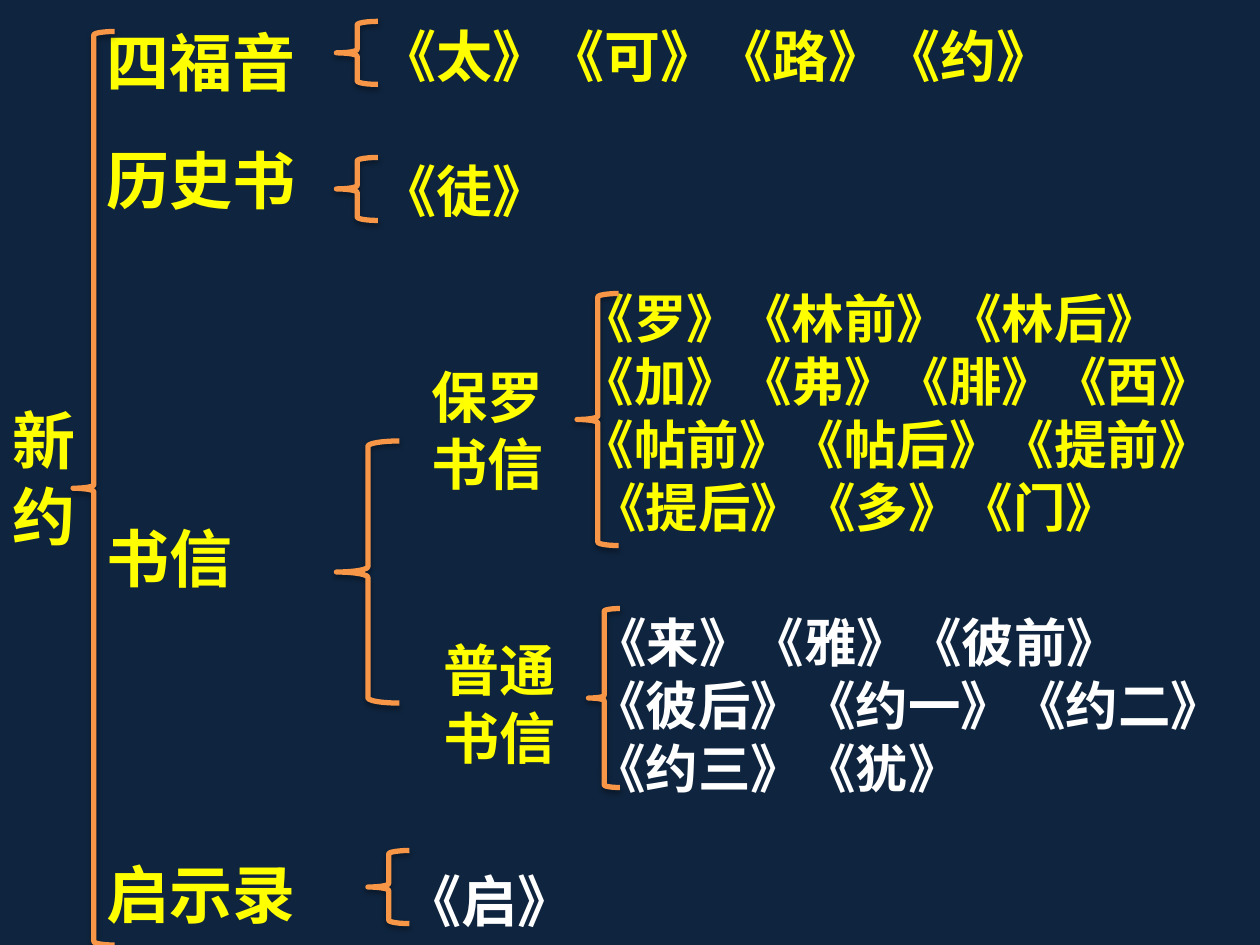
from lxml import etree
from pptx import Presentation
from pptx.dml.color import RGBColor
from pptx.enum.shapes import MSO_SHAPE
from pptx.enum.text import MSO_ANCHOR
from pptx.oxml import parse_xml
from pptx.oxml.ns import qn
from pptx.util import Inches, Pt

LEFT_BRACE = MSO_SHAPE.LEFT_BRACE
MIDDLE = MSO_ANCHOR.MIDDLE
FONT = "Noto Sans CJK SC"
BACKGROUND, YELLOW, WHITE, ORANGE = "0F243E", "FFFF00", "FFFFFF", "F79646"
LINE_HEIGHT = 1.2
DRAWING = "http://schemas.openxmlformats.org/drawingml/2006/main"
SHADOW = (
    f'<a:effectLst xmlns:a="{DRAWING}">'
    '<a:outerShdw blurRad="40000" dist="23000" dir="5400000" rotWithShape="0">'
    '<a:srgbClr val="000000"><a:alpha val="35000"/></a:srgbClr>'
    "</a:outerShdw></a:effectLst>"
)

# Each paragraph: text, size, colour, space before in points, indent in inches
TEXT_BLOCKS = [
    ((0, 0, 0.83, 7.5), [("新约", 36, YELLOW, 0, 0)]),
    ((0.75, 0, 2.33, 7.5), [
        ("四福音", 36, YELLOW, 0, 0),
        ("历史书", 36, YELLOW, 24, 0),
        ("书信", 36, YELLOW, 172.8, 0),
        ("启示录", 36, YELLOW, 148.8, 0),
    ]),
    ((2.92, 0, 7, 7.5), [
        ("《太》《可》《路》《约》", 32, YELLOW, 0, 0),
        ("《徒》", 32, YELLOW, 38.4, 0),
        ("《罗》《林前》《林后》", 30, YELLOW, 36, 1.6),
        ("《加》《弗》《腓》《西》", 30, YELLOW, 0, 1.6),
        ("《帖前》《帖后》《提前》", 30, YELLOW, 0, 1.6),
        ("《提后》《多》《门》", 30, YELLOW, 0, 1.69),
        ("《来》《雅》《彼前》", 30, WHITE, 40.8, 1.7),
        ("《彼后》《约一》《约二》", 30, WHITE, 0, 1.69),
        ("《约三》《犹》", 30, WHITE, 0, 1.69),
        ("《启》", 32, WHITE, 38.4, 0.2),
    ]),
    ((3.33, 2.58, 1.25, 1.58), [("保罗书信", 32, YELLOW, 0, 0)]),
    ((3.42, 5, 1.25, 1.08), [
        ("普通", 32, YELLOW, 0, 0),
        ("书信", 32, YELLOW, 0, 0),
    ]),
]

BRACES = [
    (0.58, 0.25, 0.33, 7.25),
    (2.92, 6.75, 0.33, 0.58),
    (4.58, 2.33, 0.33, 2),
    (2.67, 0.17, 0.33, 0.5),
    (2.67, 3.5, 0.5, 2.08),
    (2.67, 1.25, 0.33, 0.5),
    (4.67, 4.83, 0.25, 1.42),
]


def color(value):
    return RGBColor.from_string(value)


def set_attributes(target, values):
    for name, value in values.items():
        setattr(target, name, value)


def write_paragraph(paragraph, text, size, fill, space_before, indent):
    run = paragraph.add_run()
    run.text = text
    set_attributes(run.font, {"name": FONT, "size": Pt(size), "bold": True})
    run.font.color.rgb = color(fill)
    east_asian = etree.SubElement(run.font._element, qn("a:ea"))
    east_asian.set("typeface", FONT)
    paragraph.line_spacing = Pt(LINE_HEIGHT * size)
    if space_before:
        paragraph.space_before = Pt(space_before)
    if indent:
        paragraph._p.get_or_add_pPr().set("marL", str(Inches(indent)))


def add_text_block(slide, box, paragraphs):
    frame = slide.shapes.add_textbox(*map(Inches, box)).text_frame
    set_attributes(frame, {
        "word_wrap": True,
        "vertical_anchor": MIDDLE,
        "margin_top": Inches(0.09),
        "margin_bottom": Inches(0.01),
    })
    for index, content in enumerate(paragraphs):
        paragraph = frame.add_paragraph() if index else frame.paragraphs[0]
        write_paragraph(paragraph, *content)


def add_brace(slide, box):
    brace = slide.shapes.add_shape(LEFT_BRACE, *map(Inches, box))
    brace.fill.background()
    brace.line.color.rgb = color(ORANGE)
    brace.line.width = Pt(3)
    brace._element.spPr.append(parse_xml(SHADOW))


def main():
    presentation = Presentation()
    presentation.slide_width = Inches(10)
    presentation.slide_height = Inches(7.5)
    slide = presentation.slides.add_slide(presentation.slide_layouts[6])
    slide.background.fill.solid()
    slide.background.fill.fore_color.rgb = color(BACKGROUND)
    for box, paragraphs in TEXT_BLOCKS:
        add_text_block(slide, box, paragraphs)
    for box in BRACES:
        add_brace(slide, box)
    presentation.save("out.pptx")


if __name__ == "__main__":
    main()
